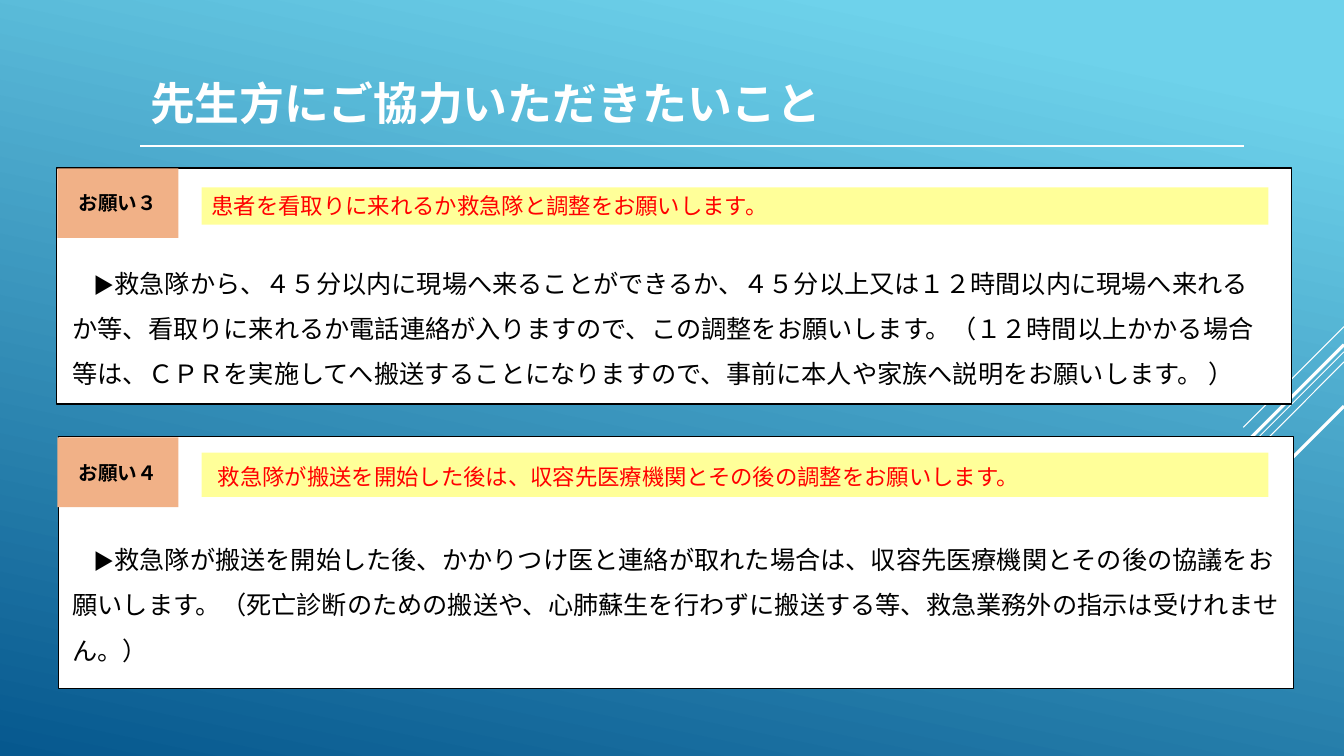
from dataclasses import dataclass

from lxml import etree
from pptx import Presentation
from pptx.dml.color import RGBColor
from pptx.enum.shapes import MSO_CONNECTOR, MSO_SHAPE
from pptx.enum.text import MSO_ANCHOR, MSO_AUTO_SIZE, PP_ALIGN
from pptx.oxml.ns import qn
from pptx.shapes.autoshape import Shape
from pptx.slide import Slide
from pptx.text.text import TextFrame
from pptx.util import Inches, Pt

RECTANGLE = MSO_SHAPE.RECTANGLE
STRAIGHT = MSO_CONNECTOR.STRAIGHT
TOP, MIDDLE = MSO_ANCHOR.TOP, MSO_ANCHOR.MIDDLE
LEFT, CENTER = PP_ALIGN.LEFT, PP_ALIGN.CENTER
GROW = MSO_AUTO_SIZE.SHAPE_TO_FIT_TEXT

JAPANESE_FONT = "Noto Sans CJK JP"
BODY_FONT = "League Spartan"
COLORS = {
    "sky": "6ED2EB",
    "deep": "06588E",
    "white": "FFFFFF",
    "black": "000000",
    "tag": "F1B187",
    "highlight": "FFFF99",
    "red": "FF0000",
}


@dataclass(frozen=True)
class Box:
    left: float
    top: float
    width: float
    height: float

    def lengths(self) -> tuple[int, int, int, int]:
        return Inches(self.left), Inches(self.top), Inches(self.width), Inches(self.height)


@dataclass(frozen=True)
class TextRun:
    text: str
    size: float
    color: str
    bold: bool = False
    font: str = JAPANESE_FONT


@dataclass(frozen=True)
class Rule:
    start: tuple[float, float]
    end: tuple[float, float]
    width: float


@dataclass(frozen=True)
class Request:
    tag: str
    panel: Box
    tag_box: Box
    heading_box: Box
    heading: tuple[TextRun, ...]
    body_box: Box
    body: str


RULES = (
    Rule((13.33, 3.24), (12.33, 4.24), 0.75),
    Rule((13.33, 3.49), (10.07, 6.75), 0.75),
    Rule((13.33, 3.59), (11.26, 5.67), 0.75),
    Rule((13.33, 3.42), (11.42, 5.33), 2.25),
    Rule((13.33, 4.03), (11.94, 5.42), 2.25),
    Rule((1.39, 1.45), (12.34, 1.45), 1.25),
)

REQUESTS = (
    Request(
        "お願い３",
        Box(0.56, 1.67, 12.25, 2.34),
        Box(0.57, 1.67, 1.2, 0.69),
        Box(2, 1.86, 10.58, 0.37),
        (TextRun("患者を看取りに来れるか救急隊と調整をお願いします。", 16, "red"),),
        Box(0.62, 2.46, 12.1, 2.23),
        "救急隊から、４５分以内に現場へ来ることができるか、４５分以上又は１２時間以内に現場へ来れる"
        "か等、看取りに来れるか電話連絡が入りますので、この調整をお願いします。（１２時間以上かかる場合"
        "等は、ＣＰＲを実施してへ搬送することになりますので、事前に本人や家族へ説明をお願いします。 ）",
    ),
    Request(
        "お願い４",
        Box(0.58, 4.33, 12.25, 2.5),
        Box(0.57, 4.34, 1.2, 0.69),
        Box(2, 4.49, 10.58, 0.44),
        (
            TextRun(" ", 20, "red", True),
            TextRun("救急隊が搬送を開始した後は、収容先医療機関とその後の調整をお願いします。", 16, "red"),
        ),
        Box(0.62, 5.2, 12.22, 1.78),
        "救急隊が搬送を開始した後、かかりつけ医と連絡が取れた場合は、収容先医療機関とその後の協議をお"
        "願いします。（死亡診断のための搬送や、心肺蘇生を行わずに搬送する等、救急業務外の指示は受けれませ"
        "ん。）",
    ),
)


def color_of(name: str) -> RGBColor:
    return RGBColor.from_string(COLORS[name])


def paint_background(slide: Slide) -> None:
    fill = slide.background.fill
    fill.gradient()
    fill.gradient_angle = 258
    for stop, position, color in zip(fill.gradient_stops, (0.1, 1), ("sky", "deep")):
        stop.position = position
        stop.color.rgb = color_of(color)


def add_rule(slide: Slide, rule: Rule) -> None:
    points = [Inches(value) for value in rule.start + rule.end]
    connector = slide.shapes.add_connector(STRAIGHT, *points)
    connector.line.color.rgb = color_of("white")
    connector.line.width = Pt(rule.width)
    etree.SubElement(connector.element.spPr, qn("a:effectLst"))


def add_rectangle(slide: Slide, box: Box, fill: str, line: str | None = None) -> Shape:
    shape = slide.shapes.add_shape(RECTANGLE, *box.lengths())
    shape.shadow.inherit = False
    shape.fill.solid()
    shape.fill.fore_color.rgb = color_of(fill)
    if line:
        shape.line.color.rgb = color_of(line)
        shape.line.width = Pt(1.25)
    else:
        shape.line.fill.background()
    return shape


def write_text(
    frame: TextFrame,
    runs: tuple[TextRun, ...],
    anchor: MSO_ANCHOR = TOP,
    alignment: PP_ALIGN = LEFT,
    line_spacing: float = 1.0,
) -> None:
    frame.word_wrap = True
    frame.vertical_anchor = anchor
    paragraph = frame.paragraphs[0]
    paragraph.alignment = alignment
    paragraph.line_spacing = line_spacing
    for item in runs:
        run = paragraph.add_run()
        run.text = item.text
        run.font.size = Pt(item.size)
        run.font.bold = item.bold
        run.font.color.rgb = color_of(item.color)
        run.font.name = item.font
        east_asian = etree.SubElement(run.font._element, qn("a:ea"))
        east_asian.set("typeface", JAPANESE_FONT)


def add_request(slide: Slide, request: Request) -> None:
    add_rectangle(slide, request.panel, "white", "black")

    tag = add_rectangle(slide, request.tag_box, "tag")
    write_text(tag.text_frame, (TextRun(request.tag, 14, "black", True),), MIDDLE, CENTER)

    heading = add_rectangle(slide, request.heading_box, "highlight")
    write_text(heading.text_frame, request.heading)
    heading.text_frame.auto_size = GROW

    body = slide.shapes.add_textbox(*request.body_box.lengths())
    body_runs = (
        TextRun("　▶", 15, "black"),
        TextRun(request.body, 18, "black", font=BODY_FONT),
    )
    write_text(body.text_frame, body_runs, line_spacing=1.5)
    body.text_frame.auto_size = GROW


def main() -> None:
    presentation = Presentation()
    presentation.slide_width = Inches(13.33)
    presentation.slide_height = Inches(7.5)
    slide = presentation.slides.add_slide(presentation.slide_layouts[6])
    paint_background(slide)
    for rule in RULES:
        add_rule(slide, rule)
    title = slide.shapes.add_textbox(*Box(1.39, 0.67, 11.13, 0.69).lengths())
    title_run = TextRun("先生方にご協力いただきたいこと", 32, "white", True)
    write_text(title.text_frame, (title_run,), MIDDLE)
    for request in REQUESTS:
        add_request(slide, request)
    presentation.save("out.pptx")


if __name__ == "__main__":
    main()
